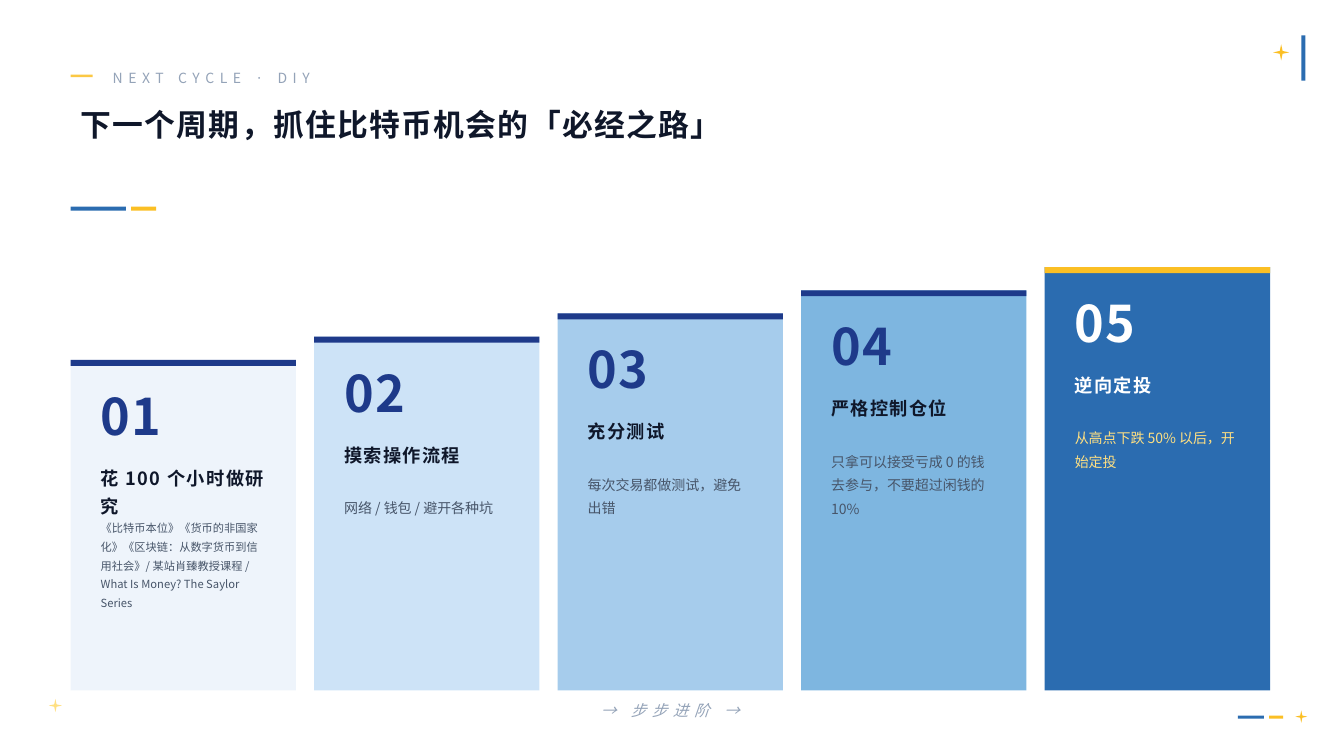
"""Build a slide of five rising steps towards the next cycle."""
from dataclasses import dataclass

from lxml import etree
from pptx import Presentation
from pptx.dml.color import RGBColor
from pptx.enum.shapes import MSO_SHAPE
from pptx.enum.text import MSO_ANCHOR, MSO_AUTO_SIZE, PP_ALIGN
from pptx.oxml.ns import qn
from pptx.util import Pt

RECT, STAR = MSO_SHAPE.RECTANGLE, MSO_SHAPE.STAR_4_POINT
TOP, MIDDLE = MSO_ANCHOR.TOP, MSO_ANCHOR.MIDDLE
LEFT, CENTER = PP_ALIGN.LEFT, PP_ALIGN.CENTER
NO_FIT = MSO_AUTO_SIZE.NONE


@dataclass(frozen=True)
class Theme:
    font: str = "Noto Sans CJK JP"
    blue: str = "2B6CB0"
    navy: str = "1E3A8A"
    gold: str = "FBBF24"
    pale_gold: str = "FFE082"
    ink: str = "0F172A"
    slate: str = "475569"
    muted: str = "94A3B8"
    white: str = "FFFFFF"
    title: int = 22
    number: int = 36
    heading: int = 13
    body: int = 10
    small: int = 8
    label: int = 10
    footer: int = 11


THEME = Theme()

LABEL = "NEXT CYCLE · DIY"
TITLE = "下一个周期，抓住比特币机会的「必经之路」"
FOOTER = "→ 步步进阶 →"
STEPS = [
    ("花 100 个小时做研究",
     "《比特币本位》《货币的非国家化》《区块链：从数字货币到信用社会》"
     "/ 某站肖臻教授课程 / What Is Money? The Saylor Series", "EEF4FB"),
    ("摸索操作流程", "网络 / 钱包 / 避开各种坑", "CDE3F7"),
    ("充分测试", "每次交易都做测试，避免出错", "A6CCEC"),
    ("严格控制仓位", "只拿可以接受亏成 0 的钱去参与，不要超过闲钱的 10%", "7EB6E0"),
    ("逆向定投", "从高点下跌 50% 以后，开始定投", THEME.blue),
]
ORNAMENTS = [
    (RECT, 929.5, 25.2, 2.9, 32.4, THEME.blue),
    (STAR, 909.4, 31.7, 11.5, 11.5, THEME.gold),
    (RECT, 884.2, 511.2, 18.7, 2.1, THEME.blue),
    (RECT, 906.5, 511.2, 10, 2.1, THEME.gold),
    (STAR, 925.2, 507.6, 8.6, 8.6, THEME.gold),
    (STAR, 34.9, 499.3, 9.4, 9.4, THEME.pale_gold),
    (RECT, 50.4, 147.6, 39.6, 2.9, THEME.blue),
    (RECT, 93.6, 147.6, 18, 2.9, THEME.gold),
]

MARGIN, CONTENT_WIDTH = 50.4, 856.8
GAP, BASE, FIRST_HEIGHT, RISE = 12.96, 493.2, 236.16, 16.56
PADDING, BAND = 14.4, 4.3


def add_block(page, kind, left, top, width, height, color):
    block = page.shapes.add_shape(kind, Pt(left), Pt(top), Pt(width), Pt(height))
    block.shadow.inherit = False
    block.fill.solid()
    block.fill.fore_color.rgb = RGBColor.from_string(color)
    block.line.fill.background()
    return block


def write(box, text, *, size, color, bold=False, italic=False, tracking=0,
          line=None, align=LEFT, anchor=TOP):
    frame = box.text_frame
    frame.word_wrap = True
    frame.auto_size = NO_FIT
    frame.vertical_anchor = anchor
    para = frame.paragraphs[0]
    para.alignment = align
    if line:
        para.line_spacing = line
    span = para.add_run()
    span.text = text
    font = span.font
    font.size, font.bold, font.italic = Pt(size), bold, italic
    font.color.rgb = RGBColor.from_string(color)
    font.name = THEME.font
    properties = span._r.get_or_add_rPr()
    etree.SubElement(properties, qn("a:ea"), typeface=THEME.font)
    if tracking:
        properties.set("spc", str(tracking * 100))


def add_text(page, left, top, width, height, text, **style):
    box = page.shapes.add_textbox(Pt(left), Pt(top), Pt(width), Pt(height))
    write(box, text, **style)


def add_heading(page):
    dash = add_block(page, RECT, MARGIN, 53.3, 15.8, 1.8, THEME.gold)
    color = dash.fill._xPr.find(".//" + qn("a:srgbClr"))
    etree.SubElement(color, qn("a:alpha"), val="85000")
    add_text(page, 73.44, 44.64, 576, 21.6, LABEL, size=THEME.label,
             color=THEME.muted, tracking=4, anchor=MIDDLE)
    title = page.shapes.title
    title.left, title.top, title.width, title.height = map(Pt, (MARGIN, 72, 864, 72))
    write(title, TITLE, size=THEME.title, color=THEME.ink, bold=True, tracking=1)


def add_steps(page):
    width = (CONTENT_WIDTH - GAP * (len(STEPS) - 1)) / len(STEPS)
    for index, (heading, body, fill) in enumerate(STEPS):
        first, last = index == 0, index == len(STEPS) - 1
        left = MARGIN + index * (width + GAP)
        height = FIRST_HEIGHT + index * RISE
        top = BASE - height
        add_block(page, RECT, left, top, width, height, fill)
        add_block(page, RECT, left, top, width, BAND,
                  THEME.gold if last else THEME.navy)
        inner, inner_width = left + PADDING, width - 2 * PADDING
        add_text(page, inner, top + 14.4, inner_width, 50.4, f"{index + 1:02}",
                 size=THEME.number, bold=True, tracking=1,
                 color=THEME.white if last else THEME.navy)
        add_text(page, inner, top + 68.4, inner_width, 36, heading,
                 size=THEME.heading, bold=True, tracking=1, line=1.3,
                 color=THEME.white if last else THEME.ink)
        add_text(page, inner, top + 108, inner_width, height - 115.2, body,
                 size=THEME.small if first else THEME.body, line=1.4,
                 color=THEME.pale_gold if last else THEME.slate)


def main():
    deck = Presentation()
    deck.slide_width, deck.slide_height = Pt(960), Pt(540)
    page = deck.slides.add_slide(deck.slide_layouts[5])
    page.background.fill.solid()
    page.background.fill.fore_color.rgb = RGBColor.from_string(THEME.white)
    for ornament in ORNAMENTS:
        add_block(page, *ornament)
    add_heading(page)
    add_steps(page)
    add_text(page, MARGIN, 496.8, CONTENT_WIDTH, 21.6, FOOTER, size=THEME.footer,
             color=THEME.muted, italic=True, tracking=4, align=CENTER, anchor=MIDDLE)
    deck.save("out.pptx")


if __name__ == "__main__":
    main()
